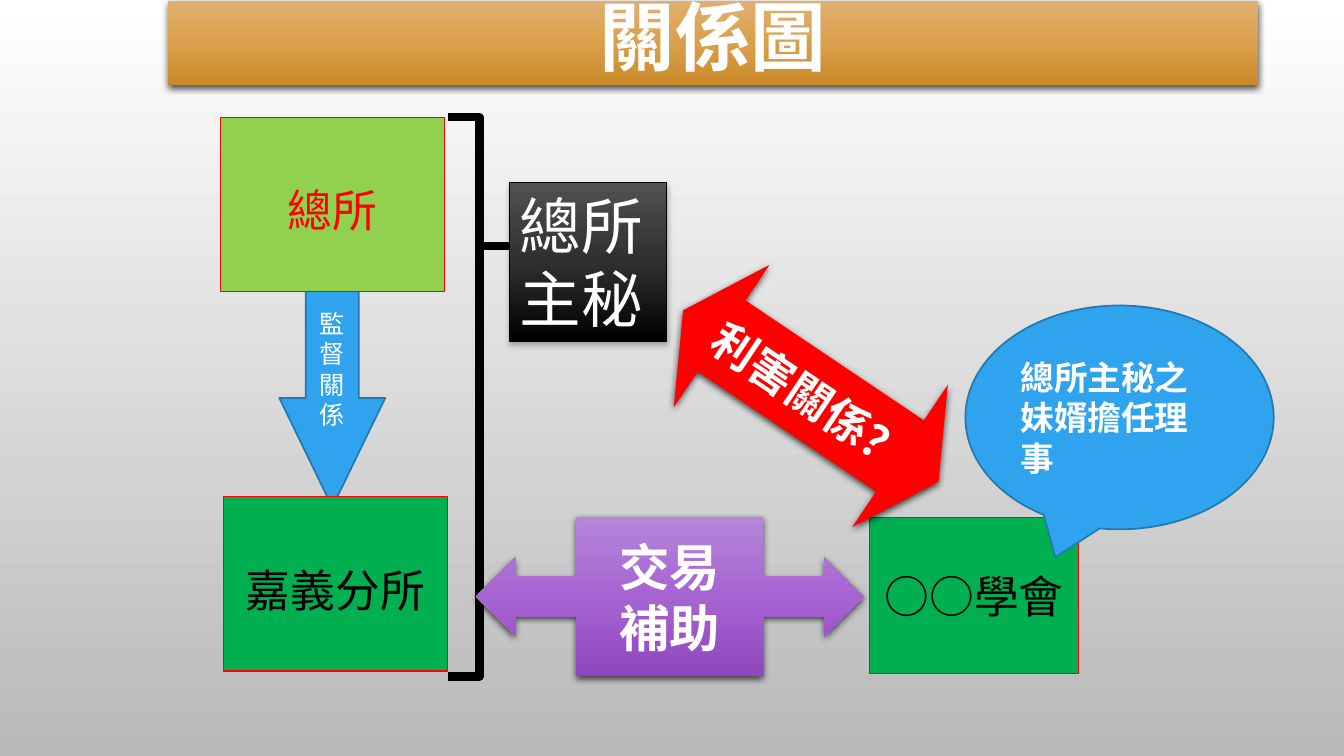
import copy
from dataclasses import dataclass
from typing import Optional

import pptx
import pptx.dml.color
import pptx.enum.shapes
import pptx.enum.text
import pptx.oxml
import pptx.oxml.ns
import pptx.util

Cm = pptx.util.Cm
Pt = pptx.util.Pt
Kind = pptx.enum.shapes.MSO_SHAPE
Align = pptx.enum.text.PP_ALIGN
Anchor = pptx.enum.text.MSO_ANCHOR
qn = pptx.oxml.ns.qn


@dataclass(frozen=True)
class Outline:
    colour: str
    width: float


@dataclass(frozen=True)
class Shadow:
    opacity: int
    blur: float
    distance: float


@dataclass(frozen=True)
class Label:
    lines: tuple[str, ...]
    size: float
    colour: str = "FFFFFF"
    bold: bool = False
    font: str = "Cabin"
    align: Optional[Align] = Align.CENTER
    anchor: Anchor = Anchor.MIDDLE
    spacing: Optional[float] = None
    space_after: Optional[float] = None
    grow: bool = False


@dataclass(frozen=True)
class Item:
    """One shape; place is left, top, width, height in centimetres."""
    kind: Kind
    place: tuple[float, float, float, float]
    fill: tuple[str, ...] = ()
    label: Optional[Label] = None
    outline: Optional[Outline] = None
    shadow: Optional[Shadow] = None
    adjustments: tuple[float, ...] = ()
    rotation: float = 0


RED_LINE = Outline("FF0000", 0.75)
BLUE_LINE = Outline("2379B0", 1.25)
DEEP_SHADOW = Shadow(69, 5, 2)
BLUE = ("2FA3EE",)
GREEN = ("00B050",)

ITEMS = (
    Item(Kind.DOWN_ARROW, (7.04, 7.19, 2.67, 5.59), BLUE,
         Label(("監", "督", "關", "係"), 18), BLUE_LINE, adjustments=(0.5, 1.03)),
    Item(Kind.RIGHT_BRACE, (11.28, 2.95, 1.6, 14.1),
         outline=Outline("000000", 6), adjustments=(0, 0.23)),
    Item(Kind.RECTANGLE, (5.56, 2.95, 5.64, 4.39), ("92D050",),
         Label(("總所",), 32, "FF0000", spacing=1.2), RED_LINE),
    Item(Kind.RECTANGLE, (4.24, 0.03, 27.46, 2.11), ("E0B071", "DA9F4B", "C98A29"),
         Label(("關係圖",), 54, bold=True, anchor=Anchor.BOTTOM, spacing=0.8),
         shadow=DEEP_SHADOW),
    Item(Kind.LEFT_RIGHT_ARROW_CALLOUT, (11.99, 13.03, 9.78, 4.01),
         ("B685DA", "A664D2", "8F47BF"),
         Label(("交易", "補助"), 36, bold=True), shadow=DEEP_SHADOW),
    Item(Kind.RECTANGLE, (21.92, 13.03, 5.26, 3.94), GREEN,
         Label(("○○學會",), 32, "000000", space_after=6), RED_LINE),
    Item(Kind.RECTANGLE, (12.85, 4.6, 3.96, 4.01), ("515151", "2F2F2F", "000000"),
         Label(("總所主秘",), 44, align=None, anchor=Anchor.TOP, grow=True),
         Outline("000000", 0.75), Shadow(28, 4, 2)),
    Item(Kind.LEFT_RIGHT_ARROW, (16.56, 7.82, 7.75, 4.32), ("FF0000",),
         Label(("利害關係？",), 32, bold=True, font="Arial"),
         shadow=DEEP_SHADOW, adjustments=(0.5, 0.27), rotation=33.9),
    Item(Kind.OVAL_CALLOUT, (24.33, 7.7, 7.77, 5.64), BLUE,
         Label(("總所主秘之妹婿擔任理事",), 24, bold=True, align=Align.LEFT), BLUE_LINE),
    Item(Kind.RECTANGLE, (5.64, 12.52, 5.64, 4.39), GREEN,
         Label(("嘉義分所",), 32, "000000", spacing=1.2), RED_LINE),
)


def rgb(value: str) -> pptx.dml.color.RGBColor:
    return pptx.dml.color.RGBColor.from_string(value)


def paint(fill, element, colours: tuple[str, ...]) -> None:
    """Fill with nothing, one colour, or an even gradient from top to bottom."""
    if not colours:
        fill.background()
    elif len(colours) == 1:
        fill.solid()
        fill.fore_color.rgb = rgb(colours[0])
    else:
        fill.gradient()
        fill.gradient_angle = 270
        stop_list = element.find(".//" + qn("a:gsLst"))
        for _ in colours[2:]:
            stop_list.append(copy.deepcopy(stop_list[0]))
        for index, (stop, colour) in enumerate(zip(fill.gradient_stops, colours)):
            stop.position = index / (len(colours) - 1)
            stop.color.rgb = rgb(colour)


def cast_shadow(shape, shadow: Shadow) -> None:
    effects = shape._element.spPr.find(qn("a:effectLst"))
    effects.append(pptx.oxml.parse_xml(
        f'<a:outerShdw {pptx.oxml.ns.nsdecls("a")} blurRad="{Pt(shadow.blur)}" '
        f'dist="{Pt(shadow.distance)}" dir="5400000" algn="ctr" rotWithShape="0">'
        f'<a:srgbClr val="000000"><a:alpha val="{shadow.opacity * 1000}"/></a:srgbClr>'
        '</a:outerShdw>'))


def write(box, label: Label) -> None:
    box.word_wrap = True
    box.vertical_anchor = label.anchor
    if label.grow:
        box.auto_size = pptx.enum.text.MSO_AUTO_SIZE.SHAPE_TO_FIT_TEXT
    box.text = "\n".join(label.lines)
    for para in box.paragraphs:
        para.alignment = label.align or Align.LEFT
        if label.spacing:
            para.line_spacing = label.spacing
        if label.space_after:
            para.space_after = Pt(label.space_after)
        para.font.name = label.font
        para.font.size = Pt(label.size)
        para.font.bold = label.bold
        para.font.color.rgb = rgb(label.colour)


def draw(page, item: Item) -> None:
    shape = page.shapes.add_shape(item.kind, *map(Cm, item.place))
    shape.rotation = item.rotation
    for index, value in enumerate(item.adjustments):
        shape.adjustments[index] = value
    paint(shape.fill, shape._element, item.fill)
    if item.outline:
        shape.line.color.rgb = rgb(item.outline.colour)
        shape.line.width = Pt(item.outline.width)
    else:
        shape.line.fill.background()
    shape.shadow.inherit = False
    if item.shadow:
        cast_shadow(shape, item.shadow)
    if item.label:
        write(shape.text_frame, item.label)


def main() -> None:
    deck = pptx.Presentation()
    deck.slide_width, deck.slide_height = Cm(33.87), Cm(19.05)
    page = deck.slides.add_slide(deck.slide_layouts[6])
    paint(page.background.fill, page._element, ("FFFFFF", "B9B9B9"))
    for item in ITEMS:
        draw(page, item)
    deck.save("out.pptx")


if __name__ == "__main__":
    main()
